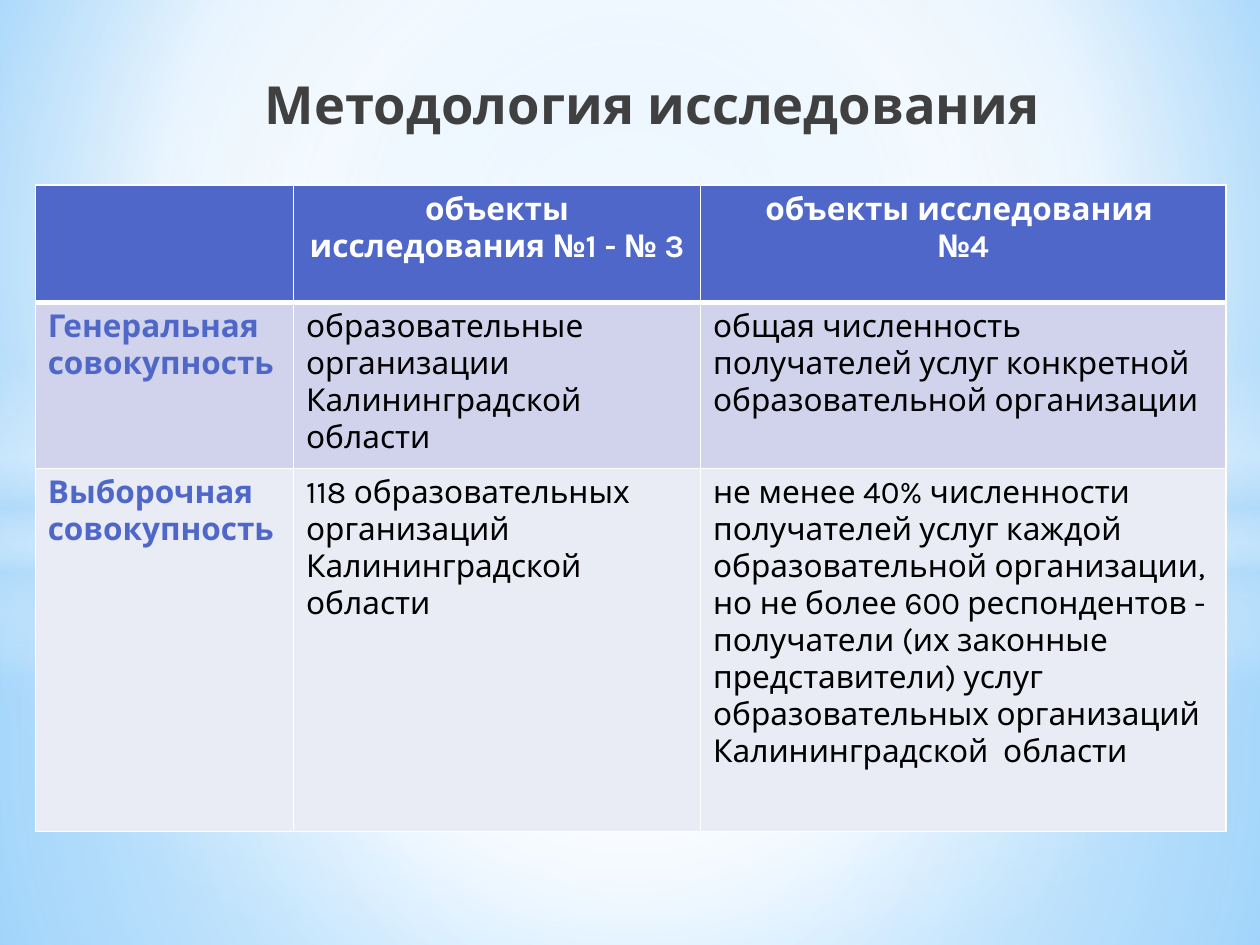
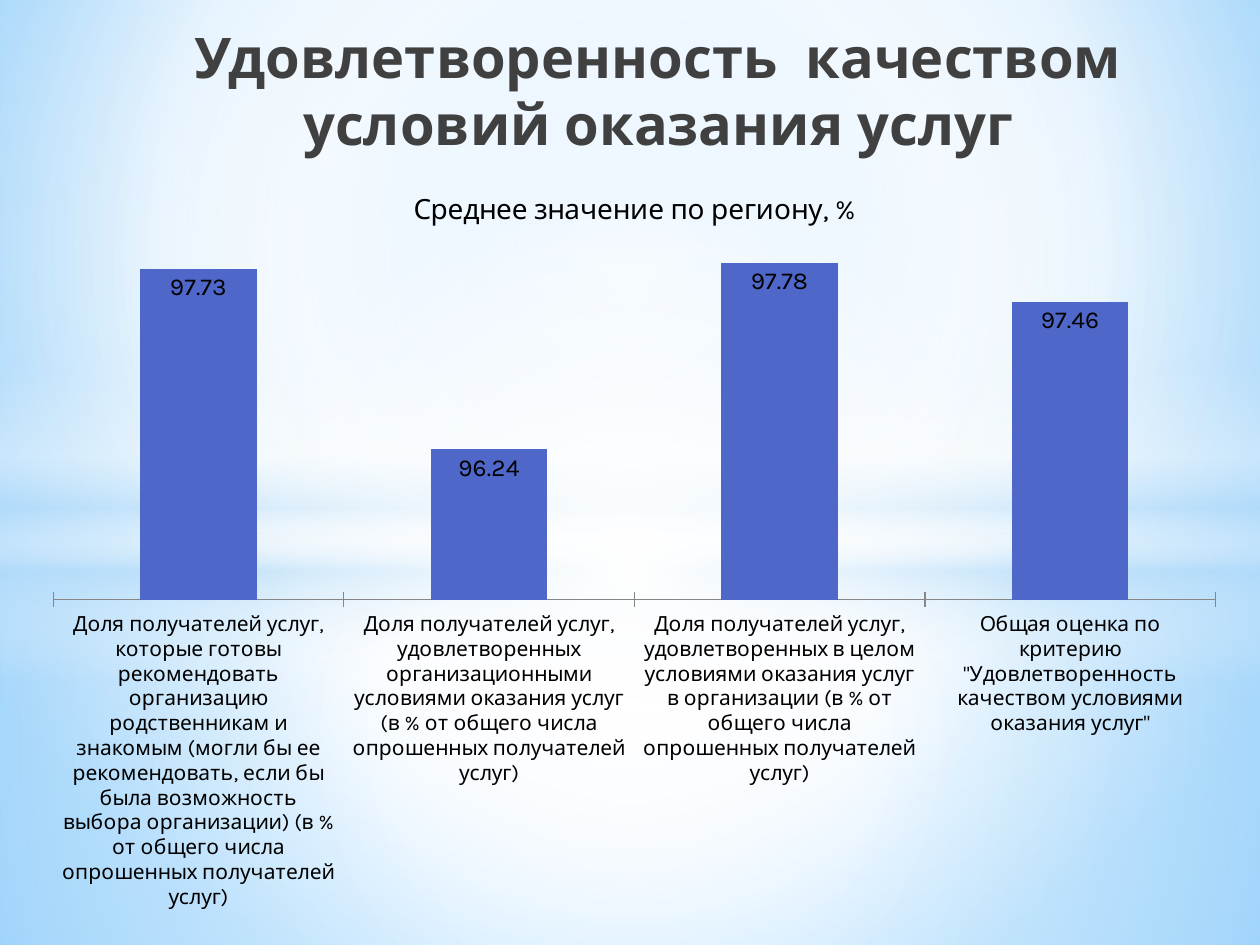
from dataclasses import dataclass
from typing import Any, Optional

from lxml.etree import SubElement
from pptx import Presentation
from pptx.chart.data import CategoryChartData
from pptx.dml.color import RGBColor
from pptx.enum.chart import XL_CHART_TYPE, XL_LABEL_POSITION, XL_TICK_LABEL_POSITION, XL_TICK_MARK
from pptx.enum.shapes import MSO_SHAPE
from pptx.enum.text import MSO_ANCHOR, PP_ALIGN
from pptx.oxml import parse_xml
from pptx.oxml.ns import nsdecls, qn
from pptx.util import Emu, Inches, Pt

FONT = "Karla"
COLORS = {
    "title": "404040",
    "accent": "4E67C8",
    "text": "000000",
    "white": "FFFFFF",
    "band_dark": "D0D3EB",
    "band_light": "E9EBF5",
    "axis": "868686",
    "sky": "9ED5FF",
    "deep_sky": "5BB9FF",
    "haze": "B4DCFA",
}
SLIDE_WIDTH, SLIDE_HEIGHT = Inches(10), Inches(7.5)


def across(percent: float) -> Emu:
    return Emu(round(SLIDE_WIDTH * percent / 100))


def down(percent: float) -> Emu:
    return Emu(round(SLIDE_HEIGHT * percent / 100))


@dataclass(frozen=True)
class Area:
    """A rectangle in percent of the slide's width and height."""
    left: float
    top: float
    width: float
    height: float

    def lengths(self) -> tuple[Emu, Emu, Emu, Emu]:
        return across(self.left), down(self.top), across(self.width), down(self.height)


@dataclass(frozen=True)
class Gradient:
    """Stops are (position, colour, opacity); no focus means top to bottom."""
    stops: tuple[tuple[int, str, int], ...]
    focus: Optional[tuple[int, int, int, int]] = (50, 50, 50, 50)


@dataclass(frozen=True)
class Glow:
    outline: MSO_SHAPE
    area: Area
    gradient: Gradient


@dataclass(frozen=True)
class Heading:
    text: str
    area: Area
    size: int


SKY = Gradient(((0, "sky", 100), (60, "white", 100), (100, "deep_sky", 100)), (20, 10, 20, 60))
GLOWS = (
    Glow(MSO_SHAPE.RECTANGLE, Area(0, 56.4, 100, 43.6),
         Gradient(((0, "white", 91), (37, "white", 76), (100, "haze", 79)))),
    Glow(MSO_SHAPE.RECTANGLE, Area(0, 0, 100, 56.4),
         Gradient(((0, "white", 89), (48, "white", 62), (100, "haze", 79)))),
    Glow(MSO_SHAPE.RECTANGLE, Area(0, 38.67, 100, 33.33),
         Gradient(((0, "white", 0), (29, "white", 30), (45, "haze", 40),
                   (55, "white", 26), (65, "haze", 60), (100, "white", 0)), None)),
    Glow(MSO_SHAPE.OVAL, Area(0, 23.33, 100, 74.4),
         Gradient(((0, "white", 100), (54, "white", 0)))),
)

METHOD_HEADING = Heading("Методология исследования", Area(7.9, 6.93, 85.8, 9.47), 30)
METHOD_AREA = Area(2.8, 19.6, 94.5, 68.4)
METHOD_COLUMNS = (20.5, 32.3, 41.7)
METHOD_ROWS = (12.4, 17.6, 38.4)
METHOD_FILLS = ("accent", "band_dark", "band_light")
METHOD_CELLS = (
    ("", "объекты исследования №1 - № 3", "объекты исследования \n№4"),
    ("Генеральная совокупность",
     "образовательные организации Калининградской области",
     "общая численность получателей услуг конкретной образовательной организации"),
    ("Выборочная совокупность",
     "118 образовательных организаций Калининградской области",
     "не менее 40% численности получателей услуг каждой образовательной организации, "
     "но не более 600 респондентов - получатели (их законные представители) услуг "
     "образовательных организаций Калининградской  области"),
)

QUALITY_HEADING = Heading("Удовлетворенность  качеством условий оказания услуг",
                          Area(6.7, 1.73, 89.1, 8.4), 32)
QUALITY_AREA = Area(2.7, 17.47, 95.3, 78.8)
QUALITY_PLOT = {"x": 0.016, "y": 0.096, "w": 0.968, "h": 0.491}
QUALITY_TITLE = "Среднее значение по региону, %"
QUALITY_SCORES = {
    "Доля получателей услуг, которые готовы рекомендовать организацию родственникам и "
    "знакомым (могли бы ее рекомендовать, если бы была возможность выбора организации) "
    "(в % от общего числа опрошенных получателей услуг)": 97.73,
    "Доля получателей услуг, удовлетворенных организационными условиями оказания услуг "
    "(в % от общего числа опрошенных получателей услуг)": 96.24,
    "Доля получателей услуг, удовлетворенных в целом условиями оказания услуг в "
    "организации (в % от общего числа опрошенных получателей услуг)": 97.78,
    'Общая оценка по критерию "Удовлетворенность качеством условиями оказания услуг"': 97.46,
}


def set_all(target: Any, values: dict[str, Any]) -> None:
    for attribute, value in values.items():
        setattr(target, attribute, value)


def style_font(font: Any, size: int, color: str = "text", bold: bool = False) -> None:
    set_all(font, {"name": FONT, "size": Pt(size), "bold": bold})
    font.color.rgb = RGBColor.from_string(COLORS[color])


def paint(fill: Any, color: str) -> None:
    fill.solid()
    fill.fore_color.rgb = RGBColor.from_string(COLORS[color])


def paint_gradient(fill: Any, owner: Any, gradient: Gradient) -> None:
    """Replace the default gradient found under owner with the given one."""
    fill.gradient()
    default = owner.find(".//" + qn("a:gradFill"))
    stops = "".join(
        f'<a:gs pos="{place * 1000}"><a:srgbClr val="{COLORS[color]}">'
        f'<a:alpha val="{opacity * 1000}"/></a:srgbClr></a:gs>'
        for place, color, opacity in gradient.stops)
    if gradient.focus is None:
        direction = '<a:lin ang="5400000" scaled="0"/>'
    else:
        sides = " ".join(f'{side}="{share * 1000}"' for side, share in zip("ltrb", gradient.focus))
        direction = f'<a:path path="circle"><a:fillToRect {sides}/></a:path>'
    default.getparent().replace(default, parse_xml(
        f'<a:gradFill {nsdecls("a")} rotWithShape="1"><a:gsLst>{stops}</a:gsLst>'
        f'{direction}</a:gradFill>'))


def add_sky_slide(deck: Any, heading: Heading) -> Any:
    """Add a slide with the shared background and its heading."""
    slide = deck.slides.add_slide(deck.slide_layouts[6])
    paint_gradient(slide.background.fill, slide.element, SKY)
    for glow in GLOWS:
        light = slide.shapes.add_shape(glow.outline, *glow.area.lengths())
        light.shadow.inherit = False
        light.line.fill.background()
        paint_gradient(light.fill, light.element, glow.gradient)
    frame = slide.shapes.add_textbox(*heading.area.lengths()).text_frame
    set_all(frame, {"word_wrap": True, "vertical_anchor": MSO_ANCHOR.TOP, "text": heading.text})
    line = frame.paragraphs[0]
    line.alignment = PP_ALIGN.CENTER
    line._p.get_or_add_pPr().set("marL", str(Inches(0.2)))
    style_font(line.runs[0].font, heading.size, "title", True)
    return slide


def add_borders(cell: Any, bottom_width: int) -> None:
    properties = cell._tc.get_or_add_tcPr()
    for side, width in {"L": 1, "R": 1, "T": 1, "B": bottom_width}.items():
        border = SubElement(properties, qn(f"a:ln{side}"), w=str(Pt(width)))
        SubElement(SubElement(border, qn("a:solidFill")), qn("a:srgbClr"), val=COLORS["white"])


def add_method_table(slide: Any) -> None:
    table = slide.shapes.add_table(
        len(METHOD_ROWS), len(METHOD_COLUMNS), *METHOD_AREA.lengths()).table
    for column, share in zip(table.columns, METHOD_COLUMNS):
        column.width = across(share)
    for row, share in zip(table.rows, METHOD_ROWS):
        row.height = down(share)
    for r, texts in enumerate(METHOD_CELLS):
        for c, text in enumerate(texts):
            cell = table.cell(r, c)
            header = r == 0
            add_borders(cell, 3 if header else 1)
            paint(cell.fill, METHOD_FILLS[r])
            cell.text = text
            color = "white" if header else "accent" if c == 0 else "text"
            for line in cell.text_frame.paragraphs:
                line.alignment = PP_ALIGN.CENTER if header else PP_ALIGN.LEFT
                for run in line.runs:
                    style_font(run.font, 18, color, header or c == 0)


def fix_plot_area(chart: Any) -> None:
    """Place the inner plot area by shares of the chart."""
    plot_area = chart._chartSpace.chart.plotArea
    for automatic in plot_area.findall(qn("c:layout")):
        plot_area.remove(automatic)
    settings = {"layoutTarget": "inner", "xMode": "edge", "yMode": "edge", **QUALITY_PLOT}
    entries = "".join(f'<c:{key} val="{value}"/>' for key, value in settings.items())
    plot_area.insert(0, parse_xml(
        f'<c:layout {nsdecls("c")}><c:manualLayout>{entries}</c:manualLayout></c:layout>'))


def add_quality_chart(slide: Any) -> None:
    scores = CategoryChartData()
    scores.categories = list(QUALITY_SCORES)
    scores.add_series(QUALITY_TITLE, list(QUALITY_SCORES.values()))
    chart = slide.shapes.add_chart(
        XL_CHART_TYPE.COLUMN_CLUSTERED, *QUALITY_AREA.lengths(), scores).chart
    set_all(chart, {"has_legend": False, "has_title": True})
    style_font(chart.font, 12)
    chart.chart_title.include_in_layout = False
    chart.chart_title.text_frame.text = QUALITY_TITLE
    style_font(chart.chart_title.text_frame.paragraphs[0].runs[0].font, 16)

    set_all(chart.value_axis, {"minimum_scale": 95, "maximum_scale": 98,
                               "has_major_gridlines": False, "visible": False})
    set_all(chart.category_axis, {"major_tick_mark": XL_TICK_MARK.CROSS,
                                  "minor_tick_mark": XL_TICK_MARK.NONE,
                                  "tick_label_position": XL_TICK_LABEL_POSITION.LOW})
    paint(chart.category_axis.format.line.fill, "axis")

    plot = chart.plots[0]
    set_all(plot, {"gap_width": 150, "vary_by_categories": False, "has_data_labels": True})
    paint(plot.series[0].format.fill, "accent")
    set_all(plot.data_labels, {"show_value": True, "position": XL_LABEL_POSITION.INSIDE_END})
    style_font(plot.data_labels.font, 14)
    fix_plot_area(chart)


def main() -> None:
    deck = Presentation()
    set_all(deck, {"slide_width": SLIDE_WIDTH, "slide_height": SLIDE_HEIGHT})
    add_method_table(add_sky_slide(deck, METHOD_HEADING))
    add_quality_chart(add_sky_slide(deck, QUALITY_HEADING))
    deck.save("out.pptx")


if __name__ == "__main__":
    main()
